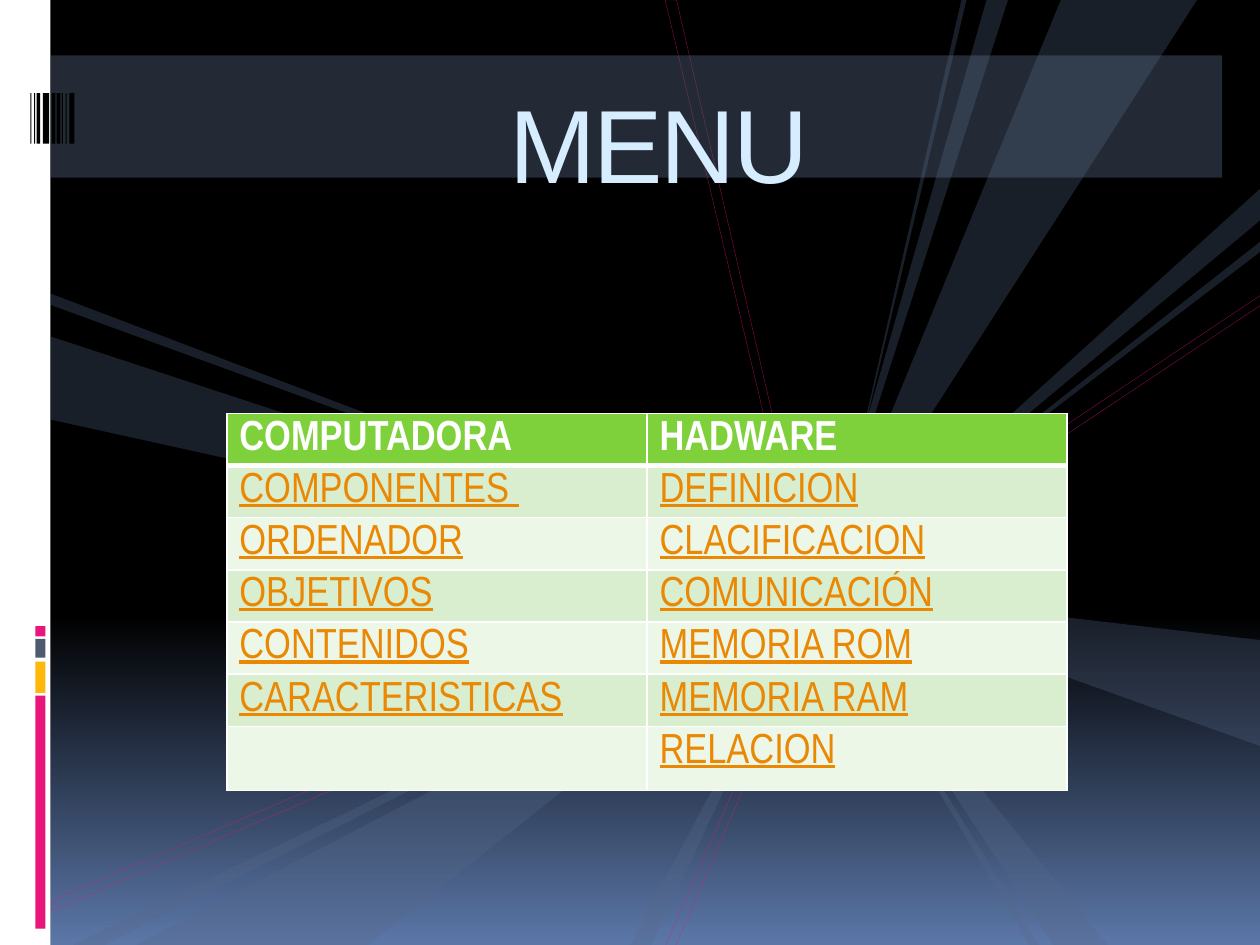
from dataclasses import dataclass
from typing import NamedTuple, Optional

import pptx
import pptx.dml.color
import pptx.enum.dml
import pptx.enum.shapes
import pptx.enum.text
import pptx.oxml.ns
import pptx.util
from lxml import etree
from pptx.util import Inches

Point = tuple[float, float]


@dataclass(frozen=True)
class Theme:
    black: str = "000000"
    white: str = "FFFFFF"
    horizon: str = "5B77A8"
    pink: str = "EA157A"
    amber: str = "FEB80A"
    slate: str = "4E5B6F"
    ray: str = "566989"
    band: str = "586A86"
    title: str = "D6ECFF"
    link: str = "EB8803"
    header: str = "7FD13B"
    stripes: tuple[str, str] = ("D8EECE", "ECF7E8")
    title_font: str = "Arial"
    table_font: str = "Arial Narrow"
    title_size: float = 59.4
    table_size: float = 24


class Block(NamedTuple):
    left: float
    top: float
    width: float
    height: float
    color: str
    alpha: Optional[int] = None


class Outline(NamedTuple):
    points: tuple[Point, ...]
    color: str
    alpha: int
    filled: bool = True


THEME = Theme()
VANISHING = (6.5, 4.67)

SIDEBAR = [
    Block(0, 0, 0.4, 7.5, THEME.white),
    Block(0.28, 5.52, 0.08, 1.85, THEME.pink),
    Block(0.28, 5.25, 0.08, 0.25, THEME.amber),
    Block(0.28, 5.07, 0.08, 0.15, THEME.slate),
    Block(0.28, 4.97, 0.08, 0.08, THEME.pink),
]
TITLE_BAND = Block(0.4, 0.44, 9.3, 0.97, THEME.band, 40)
# Left edge and width of each bar in the barcode
BARCODE = [(0.24, 0.01), (0.27, 0.01), (0.29, 0.03), (0.34, 0.05), (0.41, 0.03),
           (0.45, 0.03), (0.49, 0.01), (0.52, 0.01), (0.55, 0.04)]

BEAMS = [
    ((5.28, 7.51), (6.52, 4.67), (10.01, 2.34), (10.01, 2.42), (6.57, 4.71), (5.36, 7.51)),
    ((0.41, 7.15), (0.41, 7.23), (6.44, 4.63), (5.37, 0), (5.28, 0), (6.37, 4.59)),
]
# Two points on the slide edge and the tip where each ray ends
RAYS = [
    ((7.63, 0), (7.67, 0), (6.59, 4.55)),
    ((8.42, 0), (9.5, 0), VANISHING),
    ((10, 5.08), (10, 5.92), VANISHING),
    ((7.83, 0), (8, 0), VANISHING),
    ((8.36, 7.5), (8.79, 7.5), VANISHING),
    ((8.17, 7.5), (8.25, 7.5), VANISHING),
    ((10, 1.5), (10, 1.75), VANISHING),
    ((10, 1.92), (10, 2), VANISHING),
    ((1.08, 7.5), (2.92, 7.5), VANISHING),
    ((0.58, 7.5), (0.83, 7.5), (6.42, 4.67)),
    ((0.4, 2.67), (0.4, 3.33), (6.48, 4.67)),
    ((0.4, 2.33), (0.4, 2.42), (6.57, 4.67)),
    ((5, 7.5), (5.17, 7.5), VANISHING),
]

MENU = [
    ("COMPUTADORA", "HADWARE"),
    ("COMPONENTES ", "DEFINICION"),
    ("ORDENADOR", "CLACIFICACION"),
    ("OBJETIVOS", "COMUNICACIÓN"),
    ("CONTENIDOS", "MEMORIA ROM"),
    ("CARACTERISTICAS", "MEMORIA RAM"),
    ("", "RELACION"),
]


def rgb(color: str) -> pptx.dml.color.RGBColor:
    return pptx.dml.color.RGBColor.from_string(color)


def paint(fill, color: str, alpha: Optional[int] = None) -> None:
    """Make a fill solid, with alpha as percent opacity."""
    fill.solid()
    fill.fore_color.rgb = rgb(color)
    if alpha is not None:
        # The colour element is the only srgbClr below the fill's parent here
        srgb = fill._xPr.find(".//" + pptx.oxml.ns.qn("a:srgbClr"))
        etree.SubElement(srgb, pptx.oxml.ns.qn("a:alpha"), val=str(alpha * 1000))


def draw_block(slide, block: Block) -> None:
    shape = slide.shapes.add_shape(
        pptx.enum.shapes.MSO_SHAPE.RECTANGLE, *(Inches(v) for v in block[:4]))
    shape.shadow.inherit = False
    paint(shape.fill, block.color, block.alpha)
    shape.line.fill.background()


def draw_outline(slide, outline: Outline) -> None:
    start, *rest = [(Inches(x), Inches(y)) for x, y in outline.points]
    builder = slide.shapes.build_freeform(*start)
    builder.add_line_segments(rest, close=True)
    shape = builder.convert_to_shape()
    shape.shadow.inherit = False
    if outline.filled:
        paint(shape.fill, outline.color, outline.alpha)
        shape.line.fill.background()
    else:
        shape.fill.background()
        shape.line.width = pptx.util.Pt(0.25)
        paint(shape.line.fill, outline.color, outline.alpha)


def draw_background(slide) -> None:
    fill = slide.background.fill
    fill.gradient()
    fill.gradient_angle = 270
    for stop, position, color in zip(
            fill.gradient_stops, (0.65, 1), (THEME.black, THEME.horizon)):
        stop.position = position
        stop.color.rgb = rgb(color)


def draw_title(slide) -> None:
    box = slide.shapes.add_textbox(Inches(0.77), Inches(0.56), Inches(8.92), Inches(0.85))
    frame = box.text_frame
    frame.word_wrap = True
    frame.margin_top = Inches(0.07)
    frame.text = "MENU"
    paragraph = frame.paragraphs[0]
    paragraph.alignment = pptx.enum.text.PP_ALIGN.CENTER
    font = paragraph.runs[0].font
    font.name, font.size = THEME.title_font, pptx.util.Pt(THEME.title_size)
    font.color.rgb = rgb(THEME.title)
    paragraph.runs[0]._r.get_or_add_rPr().set("spc", "-150")


def set_borders(cell, bottom: float) -> None:
    """White cell borders, 1 pt except for the given bottom width."""
    properties = cell._tc.get_or_add_tcPr()
    for index, (side, width) in enumerate(
            (("lnL", 1), ("lnR", 1), ("lnT", 1), ("lnB", bottom))):
        line = etree.Element(pptx.oxml.ns.qn(f"a:{side}"), w=str(pptx.util.Pt(width)))
        solid = etree.SubElement(line, pptx.oxml.ns.qn("a:solidFill"))
        etree.SubElement(solid, pptx.oxml.ns.qn("a:srgbClr"), val=THEME.white)
        properties.insert(index, line)


def fill_cell(cell, label: str, row: int) -> None:
    is_header = row == 0
    paint(cell.fill, THEME.header if is_header else THEME.stripes[(row - 1) % 2])
    cell.margin_top = cell.margin_bottom = Inches(0.05)
    cell.text_frame.text = label
    paragraph = cell.text_frame.paragraphs[0]
    paragraph.font.size = pptx.util.Pt(THEME.table_size)
    for run in paragraph.runs:
        font = run.font
        font.name, font.size = THEME.table_font, pptx.util.Pt(THEME.table_size)
        font.bold, font.underline = is_header, not is_header
        font.color.rgb = rgb(THEME.white if is_header else THEME.link)
    set_borders(cell, bottom=3 if is_header else 1)


def draw_menu(slide) -> None:
    table = slide.shapes.add_table(
        len(MENU), 2, Inches(1.8), Inches(3.28), Inches(6.67), Inches(2.9)).table
    for row, labels in enumerate(MENU):
        table.rows[row].height = Inches(2.9 / 7)
        for column, label in enumerate(labels):
            fill_cell(table.cell(row, column), label, row)
    table.rows[len(MENU) - 1].height = Inches(0.51)


def main() -> None:
    deck = pptx.Presentation()
    deck.slide_width, deck.slide_height = Inches(10), Inches(7.5)
    slide = deck.slides.add_slide(deck.slide_layouts[6])
    draw_background(slide)
    for block in SIDEBAR:
        draw_block(slide, block)
    for points in BEAMS:
        draw_outline(slide, Outline(points, THEME.pink, 53, filled=False))
    for points in RAYS:
        draw_outline(slide, Outline(points, THEME.ray, 30))
    draw_block(slide, TITLE_BAND)
    for left, width in BARCODE:
        draw_block(slide, Block(left, 0.74, width, 0.4, THEME.black))
    draw_menu(slide)
    draw_title(slide)
    deck.save("out.pptx")


if __name__ == "__main__":
    main()
